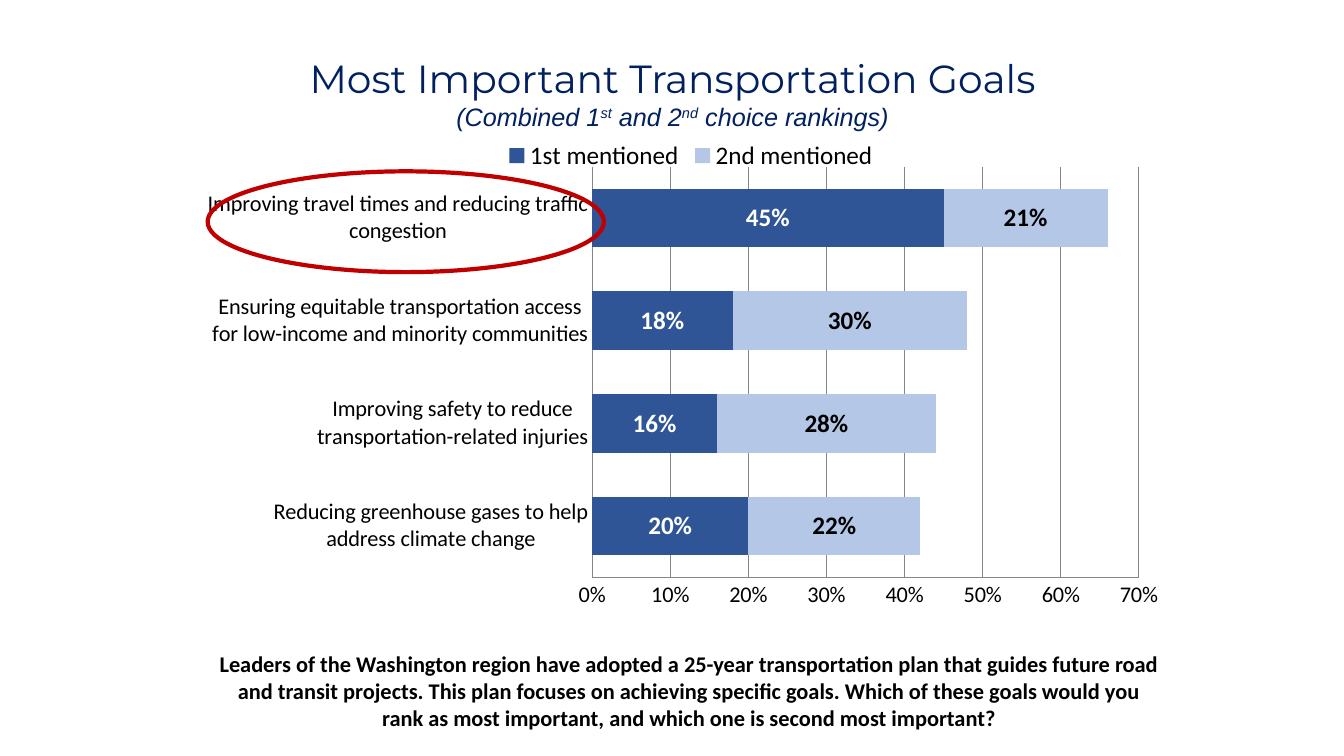
from dataclasses import dataclass

from lxml import etree
from pptx import Presentation
from pptx.chart.data import CategoryChartData
from pptx.dml.color import RGBColor
from pptx.enum.chart import XL_CHART_TYPE, XL_LABEL_POSITION, XL_LEGEND_POSITION, XL_TICK_MARK
from pptx.enum.shapes import MSO_SHAPE
from pptx.enum.text import MSO_ANCHOR, PP_ALIGN
from pptx.oxml.ns import qn
from pptx.util import Inches, Pt

BAR_STACKED = XL_CHART_TYPE.BAR_STACKED
LABEL_CENTER = XL_LABEL_POSITION.CENTER
LEGEND_TOP = XL_LEGEND_POSITION.TOP
NO_TICK = XL_TICK_MARK.NONE
ELLIPSE = MSO_SHAPE.OVAL
MIDDLE = MSO_ANCHOR.MIDDLE
CENTER = PP_ALIGN.CENTER


@dataclass(frozen=True)
class Theme:
    title_font: str = "Montserrat"
    subtitle_font: str = "Arial"
    body_font: str = "Calibri"
    title_size: int = 28
    large_size: int = 18
    body_size: int = 16
    navy: str = "002060"
    first: str = "2F5597"
    second: str = "B4C7E7"
    grid: str = "868686"
    red: str = "C00000"
    black: str = "000000"
    white: str = "FFFFFF"


THEME = Theme()
LEFT, WIDTH = 2.06, 9.55

GOALS = [
    "Reducing greenhouse gases to help address climate change",
    "Improving safety to reduce transportation-related injuries",
    "Ensuring equitable transportation access for low-income and minority communities",
    "Improving travel times and reducing traffic congestion",
]
# Series name, values, bar colour, label colour
RANKINGS = [
    ("1st mentioned", (0.20, 0.16, 0.18, 0.45), THEME.first, THEME.white),
    ("2nd mentioned", (0.22, 0.28, 0.30, 0.21), THEME.second, THEME.black),
]
SUBTITLE = [("(Combined 1", False), ("st", True), (" and 2", False),
            ("nd", True), (" choice rankings)", False)]
QUESTION = (
    "Leaders of the Washington region have adopted a 25-year transportation plan "
    "that guides future road and transit projects. This plan focuses on achieving "
    "specific goals. Which of these goals would you rank as most important, and "
    "which one is second most important?"
)


def inches(*lengths):
    return [Inches(length) for length in lengths]


def style_font(font, name, size, color, bold=False, italic=False):
    font.name, font.size = name, Pt(size)
    font.bold, font.italic = bold, italic
    font.color.rgb = RGBColor.from_string(color)


def add_span(para, text, *style, raised=False, **emphasis):
    span = para.add_run()
    span.text = text
    style_font(span.font, *style, **emphasis)
    if raised:
        span.font._element.set("baseline", "30000")


def format_para(para):
    para.alignment = CENTER
    para.line_spacing = 1.0
    para.space_before = Pt(0)


def fill_title(title):
    title.left, title.top, title.width, title.height = inches(2.17, 0.42, 9, 1)
    frame = title.text_frame
    frame.word_wrap = True
    frame.vertical_anchor = MIDDLE
    heading, subtitle = frame.paragraphs[0], frame.add_paragraph()
    for para in (heading, subtitle):
        format_para(para)
    add_span(heading, "Most Important Transportation Goals",
             THEME.title_font, THEME.title_size, THEME.navy)
    for text, raised in SUBTITLE:
        add_span(subtitle, text, THEME.subtitle_font, THEME.large_size, THEME.navy,
                 italic=True, raised=raised)


def place_plot(chart, **fractions):
    plot_area = chart._chartSpace.chart.plotArea
    for old in plot_area.findall(qn("c:layout")):
        plot_area.remove(old)
    layout = etree.Element(qn("c:layout"))
    manual = etree.SubElement(layout, qn("c:manualLayout"))
    settings = {"layoutTarget": "inner", "xMode": "edge", "yMode": "edge", **fractions}
    for tag, value in settings.items():
        etree.SubElement(manual, qn(f"c:{tag}")).set("val", str(value))
    plot_area.insert(0, layout)


def style_axis(axis):
    axis.major_tick_mark = axis.minor_tick_mark = NO_TICK
    style_font(axis.tick_labels.font, THEME.body_font, THEME.body_size, THEME.black)
    axis.format.line.color.rgb = RGBColor.from_string(THEME.grid)


def style_series(series, bar_color, label_color):
    series.format.fill.solid()
    series.format.fill.fore_color.rgb = RGBColor.from_string(bar_color)
    labels = series.data_labels
    labels.show_value = True
    labels.number_format, labels.number_format_is_linked = "0%", False
    labels.position = LABEL_CENTER
    style_font(labels.font, THEME.body_font, THEME.large_size, label_color, bold=True)


def add_ranking_chart(page):
    data = CategoryChartData(number_format="0%")
    data.categories = GOALS
    for name, values, *_ in RANKINGS:
        data.add_series(name, values)
    chart = page.shapes.add_chart(BAR_STACKED, *inches(LEFT, 1.27, WIDTH, 4.92), data).chart
    style_font(chart.font, THEME.body_font, THEME.large_size, THEME.black)
    chart.has_title = False
    chart.has_legend = True
    chart.legend.position = LEGEND_TOP
    chart.legend.include_in_layout = False
    place_plot(chart, x=0.397, y=0.078, w=0.57, h=0.828)

    # Axes
    style_axis(chart.category_axis)
    scale = chart.value_axis
    style_axis(scale)
    scale.minimum_scale, scale.maximum_scale, scale.major_unit = 0, 0.7, 0.1
    scale.tick_labels.number_format = "0%"
    scale.tick_labels.number_format_is_linked = False
    scale.has_major_gridlines = True
    scale.major_gridlines.format.line.color.rgb = RGBColor.from_string(THEME.grid)

    # Bars
    plot = chart.plots[0]
    plot.gap_width, plot.overlap = 75, 100
    plot.vary_by_categories = False
    for series, (_, _, bar_color, label_color) in zip(plot.series, RANKINGS):
        style_series(series, bar_color, label_color)


def add_question(page):
    box = page.shapes.add_textbox(*inches(LEFT, 6.4, WIDTH, 0.91))
    box.text_frame.word_wrap = True
    para = box.text_frame.paragraphs[0]
    format_para(para)
    add_span(para, QUESTION, THEME.body_font, THEME.body_size, THEME.black, bold=True)


def add_highlight(page):
    ring = page.shapes.add_shape(ELLIPSE, *inches(LEFT, 1.7, 3.93, 1))
    ring.shadow.inherit = False
    ring.fill.background()
    ring.line.color.rgb = RGBColor.from_string(THEME.red)
    ring.line.width = Pt(3)


def main():
    deck = Presentation()
    deck.slide_width, deck.slide_height = inches(13.33, 7.5)
    page = deck.slides.add_slide(deck.slide_layouts[5])
    add_ranking_chart(page)
    add_question(page)
    fill_title(page.shapes.title)
    add_highlight(page)
    deck.save("out.pptx")


if __name__ == "__main__":
    main()
